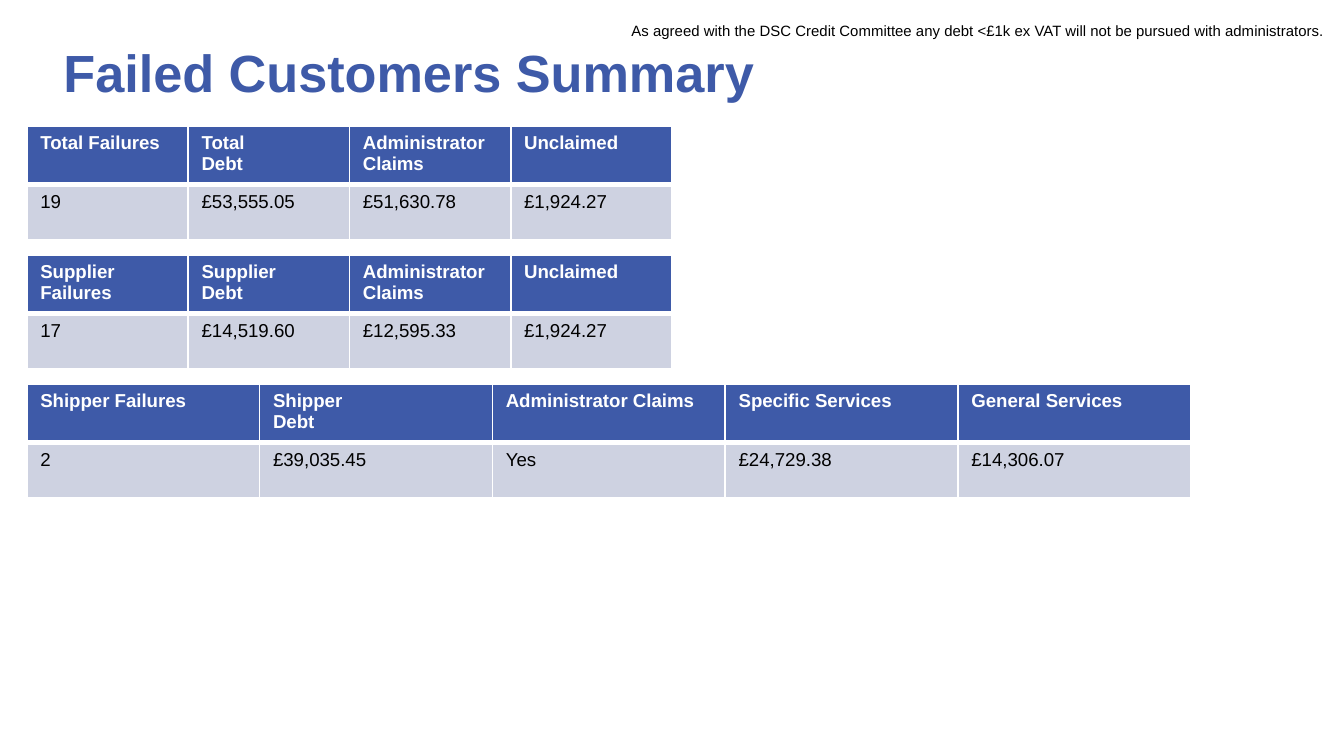
from dataclasses import dataclass

from lxml import etree
from pptx import Presentation
from pptx.dml.color import RGBColor
from pptx.enum.text import MSO_ANCHOR as Anchor, PP_ALIGN as Align
from pptx.oxml.ns import qn
from pptx.util import Inches, Pt


@dataclass(frozen=True)
class Theme:
    """Colours, font and type sizes of the slide."""
    font: str = "Arial"
    blue: str = "3E5AA8"
    pale: str = "CED2E1"
    white: str = "FFFFFF"
    black: str = "000000"
    title_size: int = 28
    table_size: int = 10
    note_size: int = 8


THEME = Theme()
SLIDE_WIDTH = 10
SLIDE_HEIGHT = SLIDE_WIDTH * 9 / 16
HEADER_HEIGHT, BODY_HEIGHT = 0.43, 0.41
TABLE_LEFT, TABLE_TOP, TABLE_PITCH = 0.2, 0.94, 0.96
TABLES = [
    (4.8, ["Total Failures", "Total\nDebt", "Administrator Claims", "Unclaimed"],
     ["19", "£53,555.05", "£51,630.78", "£1,924.27"]),
    (4.8, ["Supplier Failures", "Supplier\nDebt", "Administrator Claims", "Unclaimed"],
     ["17", "£14,519.60", "£12,595.33", "£1,924.27"]),
    (8.66, ["Shipper Failures", "Shipper\nDebt", "Administrator Claims",
            "Specific Services", "General Services"],
     ["2", "£39,035.45", "Yes", "£24,729.38", "£14,306.07"]),
]


def write_text(text_frame, text, size, color, bold=False, align=Align.LEFT):
    """Fill a text frame, one paragraph per line."""
    text_frame.text = text
    for paragraph in text_frame.paragraphs:
        paragraph.alignment = align
        font = paragraph.font
        font.name, font.size, font.bold = THEME.font, Pt(size), bold
        font.color.rgb = RGBColor.from_string(color)


def add_borders(cell, bottom_width):
    """Give a cell white borders with the given bottom width in points."""
    properties = cell._tc.get_or_add_tcPr()
    for side, width in (("L", 1), ("R", 1), ("T", 1), ("B", bottom_width)):
        line = etree.SubElement(properties, qn(f"a:ln{side}"), w=str(Pt(width)))
        fill = etree.SubElement(line, qn("a:solidFill"))
        etree.SubElement(fill, qn("a:srgbClr"), val=THEME.white)


def add_title(slide, left, top, width, height):
    """Place and format the slide title."""
    title = slide.shapes.title
    title.left, title.top = Inches(left), Inches(top)
    title.width, title.height = Inches(width), Inches(height)
    title.text_frame.vertical_anchor = Anchor.MIDDLE
    write_text(title.text_frame, "Failed Customers Summary", THEME.title_size,
               THEME.blue, bold=True, align=Align.CENTER)


def add_note(slide, left, top, width, height):
    """Place the note above the title."""
    box = slide.shapes.add_textbox(Inches(left), Inches(top), Inches(width), Inches(height))
    box.text_frame.word_wrap = False
    write_text(box.text_frame, "As agreed with the DSC Credit Committee any debt <£1k ex VAT "
               "will not be pursued with administrators.", THEME.note_size, THEME.black)


def add_summary_table(slide, left, top, width, headings, values):
    """Place a two-row table with equal columns."""
    shape = slide.shapes.add_table(2, len(headings), Inches(left), Inches(top),
                                   Inches(width), Inches(HEADER_HEIGHT + BODY_HEIGHT))
    table = shape.table
    table.horz_banding = False
    for column in table.columns:
        column.width = Inches(width / len(headings))
    rows = [
        (headings, HEADER_HEIGHT, THEME.blue, THEME.white, True, 3),
        (values, BODY_HEIGHT, THEME.pale, THEME.black, False, 1),
    ]
    for row, (texts, height, fill, color, bold, bottom_width) in zip(table.rows, rows):
        row.height = Inches(height)
        for cell, text in zip(row.cells, texts):
            write_text(cell.text_frame, text, THEME.table_size, color, bold)
            add_borders(cell, bottom_width)
            cell.fill.solid()
            cell.fill.fore_color.rgb = RGBColor.from_string(fill)


def main():
    """Build and save the presentation."""
    presentation = Presentation()
    presentation.slide_width = Inches(SLIDE_WIDTH)
    presentation.slide_height = Inches(SLIDE_HEIGHT)
    slide = presentation.slides.add_slide(presentation.slide_layouts[5])
    add_title(slide, -0.03, 0.25, 6.14, 0.57)
    add_note(slide, 4.6, 0.11, 5.4, 0.24)
    for index, (width, headings, values) in enumerate(TABLES):
        add_summary_table(slide, TABLE_LEFT, TABLE_TOP + index * TABLE_PITCH,
                          width, headings, values)
    presentation.save("out.pptx")


if __name__ == "__main__":
    main()
